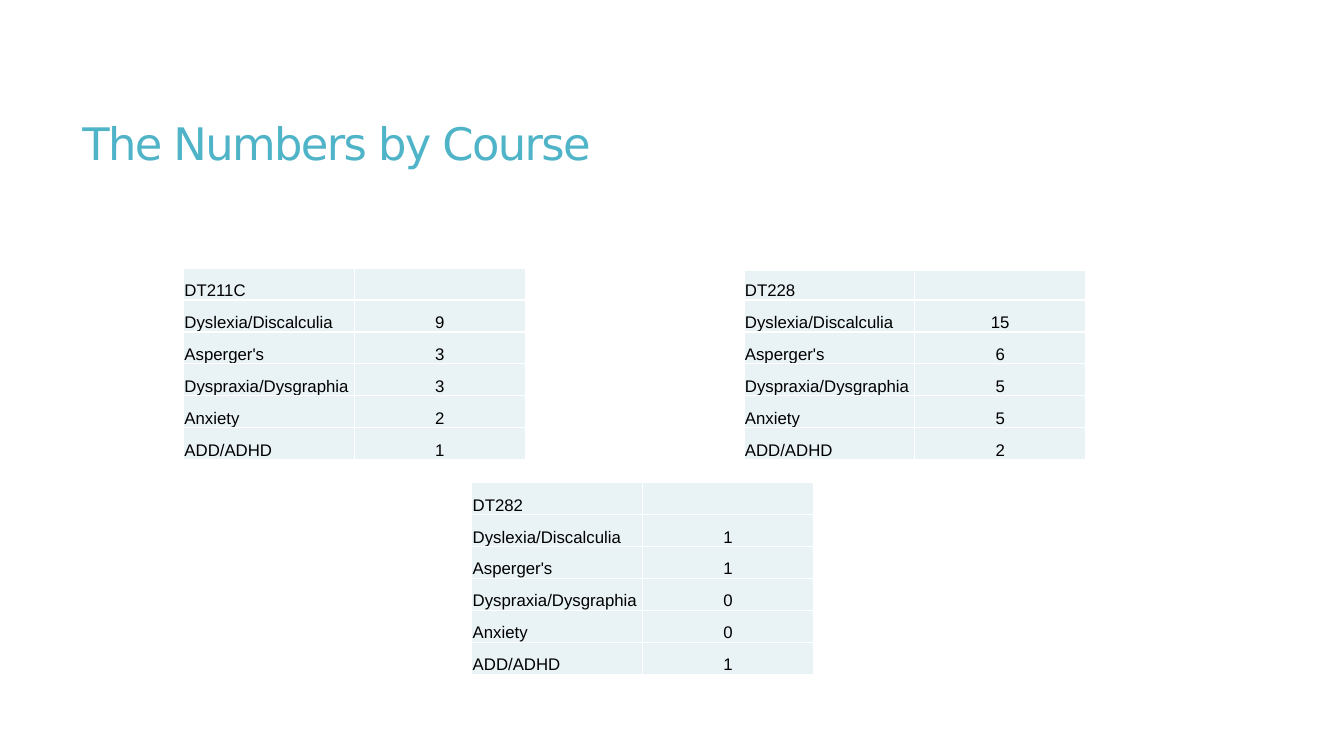
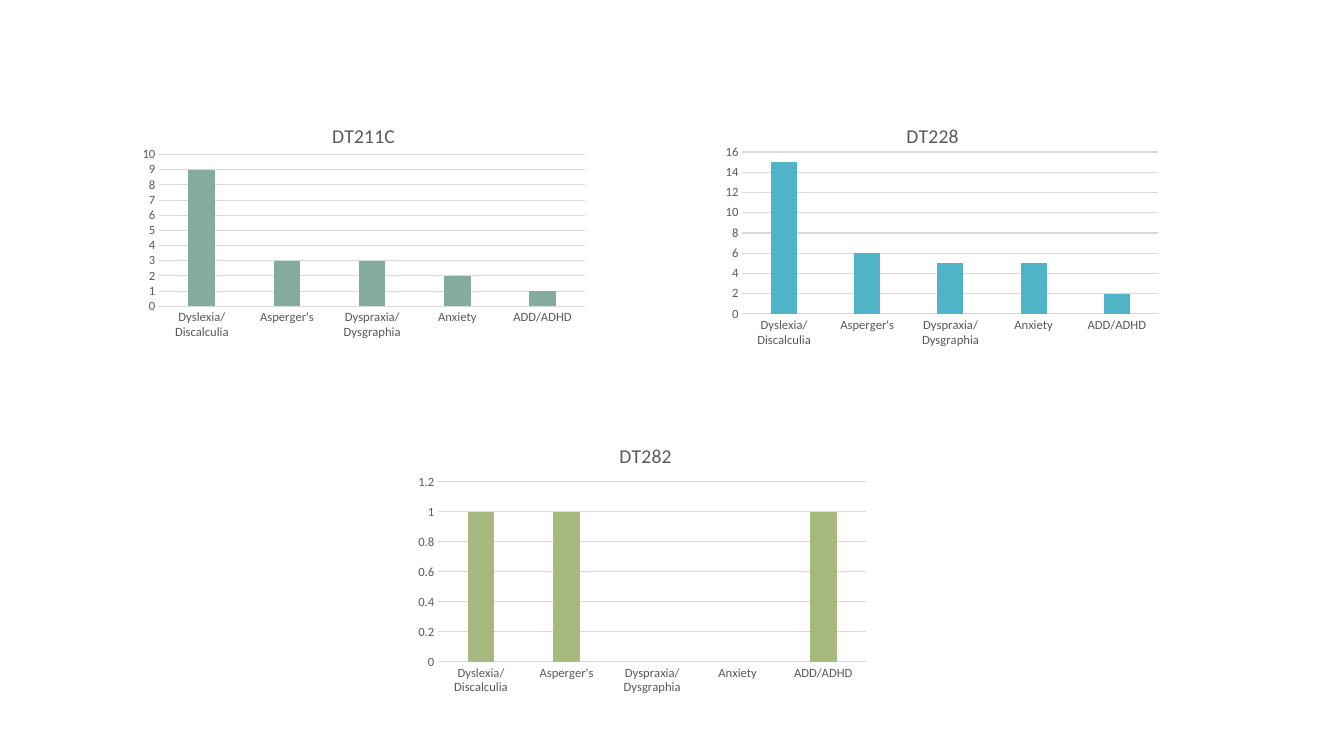
from lxml import etree
from pptx import Presentation
from pptx import util as u
from pptx.chart import data as cd
from pptx.dml.color import RGBColor
from pptx.enum import chart as ch, text as tx
from pptx.oxml import ns

COLORS = {
    "title": "50B4C8", "text": "000000", "muted": "595959", "grid": "D9D9D9",
    "cell": "E9F2F5", "border": "FFFFFF",
    "green": "84AC9D", "blue": "50B4C8", "olive": "A8B97F",
}
CATEGORIES = ["Dyslexia/Discalculia", "Asperger's", "Dyspraxia/Dysgraphia", "Anxiety", "ADD/ADHD"]
COURSES = [
    dict(name="DT211C", values=[9, 3, 3, 2, 1], color="green", top=10, unit=1,
         table=(13.65, 35.47, 25.43, 25.33), chart=(9.23, 13.6, 35.4, 42.27),
         plot=(7.4, 16.2, 89.5, 47.5), title=(43, 5)),
    dict(name="DT228", values=[15, 6, 5, 5, 2], color="blue", top=16, unit=2,
         table=(55.35, 35.73, 25.43, 25.07), chart=(51.6, 13.6, 35.02, 42.27),
         plot=(10.4, 15.4, 88.4, 50.7), title=(44.5, 5)),
    dict(name="DT282", values=[1, 1, 0, 0, 1], color="olive", top=1.2, unit=0.2,
         table=(35.1, 63.87, 25.43, 25.33), chart=(30.45, 55.87, 34.72, 36.8),
         plot=(6.2, 21.4, 91.7, 64.7), title=(44.3, 6)),
]


def rgb(name):
    return RGBColor.from_string(COLORS[name])


def set_font(font, size, color, name):
    font.size, font.name, font.bold = u.Pt(size), name, False
    font.color.rgb = rgb(color)


def write(tf, text, size=12, color="text", font="Arial", align=None, line=None, spacing=None):
    p = tf.paragraphs[0]
    p.alignment = align
    if line:
        p.line_spacing = line
    if not text:
        set_font(p.font, size, color, font)
        return
    r = p.add_run()
    r.text = text
    set_font(r.font, size, color, font)
    if spacing:
        r.font._element.set("spc", str(round(spacing * 100)))


def place(parent, index, shares, inner=False):
    for old in parent.findall(ns.qn("c:layout")):
        parent.remove(old)
    layout = etree.Element(ns.qn("c:layout"))
    manual = etree.SubElement(layout, ns.qn("c:manualLayout"))
    items = [("layoutTarget", "inner")] if inner else []
    items += [("xMode", "edge"), ("yMode", "edge")]
    items += [(k, f"{v / 100:.3f}") for k, v in zip("xywh", shares)]
    for tag, val in items:
        etree.SubElement(manual, ns.qn(f"c:{tag}")).set("val", val)
    parent.insert(index, layout)


class Deck:
    def __init__(self):
        self.prs = Presentation()
        self.prs.slide_width, self.prs.slide_height = u.Inches(13.33), u.Inches(7.5)
        self.s = None

    def slide(self):
        self.s = self.prs.slides.add_slide(self.prs.slide_layouts[6])

    def box(self, shares):
        sizes = (self.prs.slide_width, self.prs.slide_height) * 2
        return [round(size * share / 100) for size, share in zip(sizes, shares)]

    def title(self, text):
        tf = self.s.shapes.add_textbox(*self.box((5.4, 7.33, 88.35, 24.13))).text_frame
        tf.word_wrap = True
        tf.vertical_anchor = tx.MSO_ANCHOR.MIDDLE
        write(tf, text, size=32, color="title", font="DejaVu Sans", line=0.85, spacing=-1.2)

    def cell(self, cell, text, align):
        cell.fill.solid()
        cell.fill.fore_color.rgb = rgb("cell")
        cell.vertical_anchor = tx.MSO_ANCHOR.BOTTOM
        cell.margin_left = cell.margin_right = cell.margin_top = u.Inches(0.01)
        cell.margin_bottom = 0
        write(cell.text_frame, text, align=align)
        tc_pr = cell._tc.get_or_add_tcPr()
        for i, side in enumerate(("lnL", "lnR", "lnT", "lnB")):
            ln = etree.Element(ns.qn(f"a:{side}"), w=str(u.Pt(1)))
            fill = etree.SubElement(ln, ns.qn("a:solidFill"))
            etree.SubElement(fill, ns.qn("a:srgbClr"), val=COLORS["border"])
            tc_pr.insert(i, ln)

    def table(self, course):
        rows = [(course["name"], ""), *zip(CATEGORIES, map(str, course["values"]))]
        x, y, w, h = self.box(course["table"])
        tbl = self.s.shapes.add_table(len(rows), 2, x, y, w, h).table
        row_height = u.Inches(1.9 / len(rows))
        for row in tbl.rows:
            row.height = row_height
        tbl.rows[0].height = h - row_height * len(CATEGORIES)
        for i, (label, value) in enumerate(rows):
            self.cell(tbl.cell(i, 0), label, tx.PP_ALIGN.LEFT)
            self.cell(tbl.cell(i, 1), value, tx.PP_ALIGN.CENTER)

    def chart(self, course):
        data = cd.CategoryChartData()
        data.categories = CATEGORIES
        data.add_series("Series 1", course["values"])
        chart = self.s.shapes.add_chart(
            ch.XL_CHART_TYPE.COLUMN_CLUSTERED, *self.box(course["chart"]), data).chart
        set_font(chart.font, 10, "text", "Calibri")
        chart.has_legend = False
        chart.has_title = True
        write(chart.chart_title.text_frame, course["name"], size=14, color="muted", font="Calibri")
        place(chart.chart_title._element, 1, course["title"])
        place(chart._chartSpace.chart.plotArea, 0, course["plot"], inner=True)

        plot = chart.plots[0]
        plot.gap_width, plot.overlap, plot.vary_by_categories = 219, -27, False
        fill = plot.series[0].format.fill
        fill.solid()
        fill.fore_color.rgb = rgb(course["color"])

        cat, val = chart.category_axis, chart.value_axis
        for axis in (cat, val):
            axis.major_tick_mark = axis.minor_tick_mark = ch.XL_TICK_MARK.NONE
            set_font(axis.tick_labels.font, 9, "muted", "Calibri")
        val.minimum_scale, val.maximum_scale, val.major_unit = 0, course["top"], course["unit"]
        val.has_major_gridlines = True
        val.format.line.fill.background()
        for line in (cat.format.line, val.major_gridlines.format.line):
            line.width = u.Pt(0.75)
            line.color.rgb = rgb("grid")


def main():
    deck = Deck()
    deck.slide()
    deck.title("The Numbers by Course")
    for course in COURSES:
        deck.table(course)
    deck.slide()
    for course in COURSES:
        deck.chart(course)
    deck.prs.save("out.pptx")


if __name__ == "__main__":
    main()
